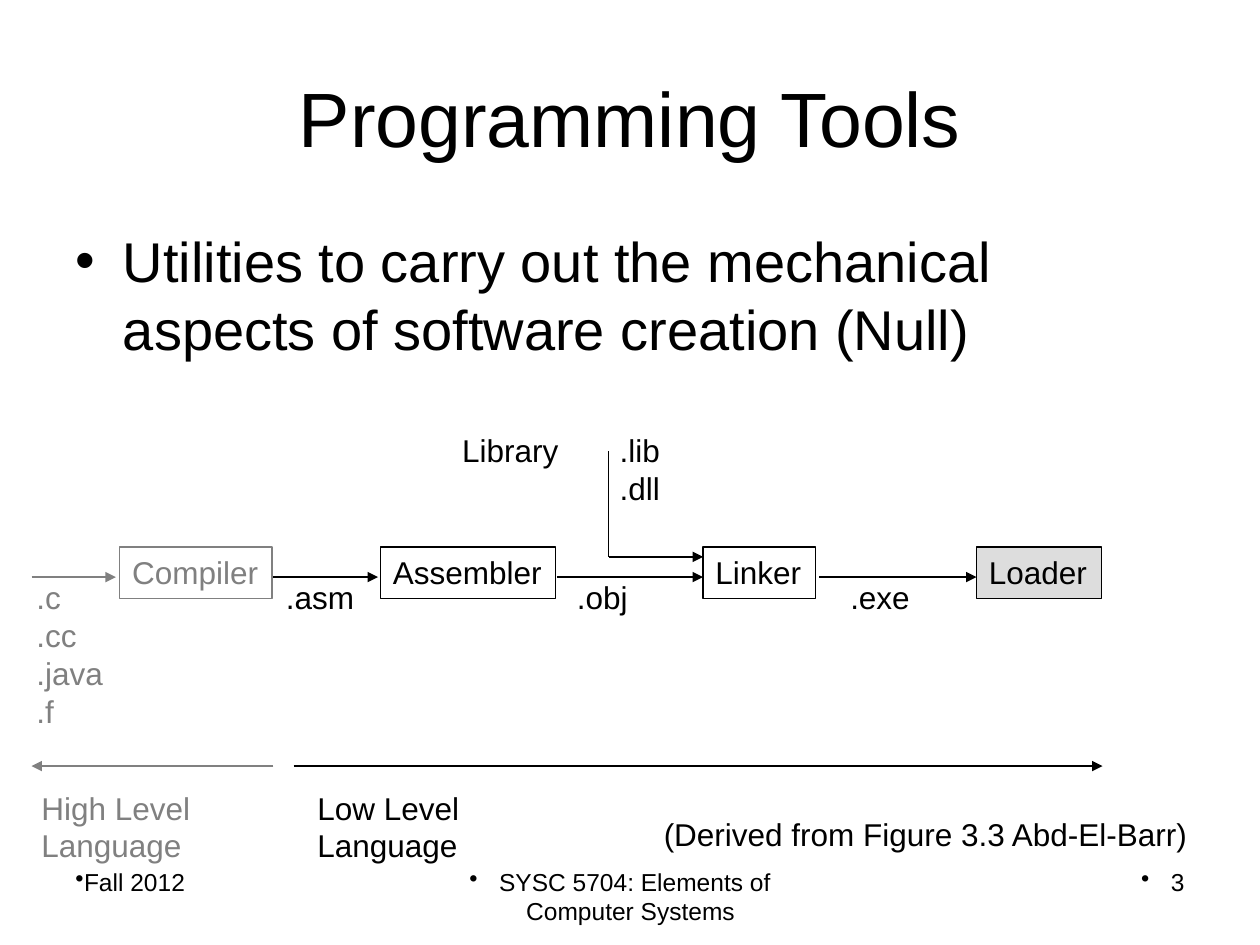
from pptx import Presentation
from pptx.dml.color import RGBColor
from pptx.enum.shapes import MSO_CONNECTOR, MSO_SHAPE
from pptx.enum.text import MSO_ANCHOR, MSO_AUTO_SIZE, PP_ALIGN
from pptx.oxml.ns import qn
from pptx.util import Inches, Pt
from lxml.etree import SubElement

FONT = "Arial"
BLACK = RGBColor(0x00, 0x00, 0x00)
GRAY = RGBColor(0x80, 0x80, 0x80)
LIGHT = RGBColor(0xDD, 0xDD, 0xDD)


def write(sp, text, size, color=BLACK, align=PP_ALIGN.LEFT):
    tf = sp.text_frame
    tf.text = text
    for p in tf.paragraphs:
        p.alignment = align
        p.font.name, p.font.size = FONT, Pt(size)
        p.font.color.rgb = color
    return tf


def place(sp, box):
    sp.left, sp.top, sp.width, sp.height = (Inches(v) for v in box)


def add_label(slide, box, text, color=BLACK):
    sp = slide.shapes.add_textbox(*(Inches(v) for v in box))
    tf = write(sp, text, 18, color)
    tf.word_wrap = False
    tf.auto_size = MSO_AUTO_SIZE.SHAPE_TO_FIT_TEXT


def add_tool(slide, box, text, color=BLACK, fill=None):
    sp = slide.shapes.add_shape(MSO_SHAPE.RECTANGLE, *(Inches(v) for v in box))
    sp.shadow.inherit = False
    if fill is None:
        sp.fill.background()
    else:
        sp.fill.solid()
        sp.fill.fore_color.rgb = fill
    sp.line.color.rgb, sp.line.width = color, Pt(0.75)
    tf = write(sp, text, 18, color)
    tf.word_wrap = False
    tf.vertical_anchor = MSO_ANCHOR.TOP
    tf.auto_size = MSO_AUTO_SIZE.SHAPE_TO_FIT_TEXT


def add_line(slide, x1, y1, x2, y2, color=BLACK, arrow=True):
    line = slide.shapes.add_connector(
        MSO_CONNECTOR.STRAIGHT, *(Inches(v) for v in (x1, y1, x2, y2)))
    line.line.color.rgb, line.line.width = color, Pt(0.75)
    sp_pr = line._element.spPr
    if arrow:
        SubElement(sp_pr.find(qn("a:ln")), qn("a:tailEnd"), type="triangle")
    SubElement(sp_pr, qn("a:effectLst"))


def add_heading(slide, box):
    place(slide.shapes.title, box)
    tf = write(slide.shapes.title, "Programming Tools", 44, align=PP_ALIGN.CENTER)
    tf.vertical_anchor = MSO_ANCHOR.MIDDLE


def add_body(slide, box):
    body = slide.placeholders[1]
    place(body, box)
    write(body, "Utilities to carry out the mechanical aspects of "
                "software creation (Null)", 32)


def add_toolchain(slide, box):
    left, top, width, height = box
    tool_top, flow_y, file_y = top + 0.97, top + 1.21, top + 1.17

    # Tools: name, offset, width, colour, fill
    for name, x, w, color, fill in (
            ("Compiler", 0.7, 1.21, GRAY, None),
            ("Assembler", 2.77, 1.39, BLACK, None),
            ("Linker", 5.33, 0.89, BLACK, None),
            ("Loader", 7.5, 0.99, BLACK, LIGHT)):
        add_tool(slide, (left + x, tool_top, w, 0.41), name, color, fill)

    # Flow between the tools: start and end offsets
    for x1, x2, color in ((0, 0.67, GRAY), (1.92, 2.75, BLACK),
                          (4.17, 5.33, BLACK), (6.25, 7.5, BLACK)):
        add_line(slide, left + x1, flow_y, left + x2, flow_y, color)

    # Files passed along the flow
    for text, x, w, h, color in ((".c\n.cc\n.java\n.f", -0.06, 0.73, 1.3, GRAY),
                                 (".asm", 1.92, 0.74, 0.4, BLACK),
                                 (".obj", 4.23, 0.6, 0.4, BLACK),
                                 (".exe", 6.4, 0.67, 0.4, BLACK)):
        add_label(slide, (left + x, file_y, w, h), text, color)

    # Library branch into the linker
    branch_x, branch_y = left + 4.58, top + 1.05
    add_label(slide, (left + 3.32, top, 0.97, 0.4), "Library")
    add_label(slide, (left + 4.57, top, 0.52, 0.7), ".lib\n.dll")
    add_line(slide, branch_x, top + 0.21, branch_x, branch_y, arrow=False)
    add_line(slide, branch_x, branch_y, left + 5.33, branch_y)

    # Language levels along the bottom
    level_y, bottom = top + 2.71, top + height
    add_line(slide, left + 1.92, level_y, left, level_y, GRAY)
    add_line(slide, left + 2.08, level_y, left + width, level_y)
    add_label(slide, (left - 0.02, bottom - 0.7, 1.38, 0.7),
              "High Level\nLanguage", GRAY)
    add_label(slide, (left + 2.17, bottom - 0.7, 1.33, 0.7),
              "Low Level\nLanguage")


def add_footer(slide, box):
    left, top, width, height = box
    for text, x, w, align in (
            ("Fall 2012", 0, 2.33, PP_ALIGN.LEFT),
            ("SYSC 5704: Elements of Computer Systems", 2.92, 3.17, PP_ALIGN.CENTER),
            ("3", width - 2.33, 2.33, PP_ALIGN.RIGHT)):
        sp = slide.shapes.add_textbox(
            *(Inches(v) for v in (left + x, top, w, height)))
        tf = write(sp, text, 14, align=align)
        tf.word_wrap = True
        p_pr = tf.paragraphs[0]._p.get_or_add_pPr()
        bullet = p_pr.makeelement(qn("a:buChar"), {"char": "•"})
        p_pr.insert(0, bullet)


def main():
    prs = Presentation()
    prs.slide_width, prs.slide_height = Inches(10), Inches(7.5)
    slide = prs.slides.add_slide(prs.slide_layouts[1])
    add_heading(slide, (0.5, 0.3, 9, 1.25))
    add_body(slide, (0.5, 1.75, 9, 4.95))
    add_toolchain(slide, (0.25, 3.37, 8.5, 3.54))
    add_label(slide, (5.17, 6.42, 4.37, 0.4),
              "(Derived from Figure 3.3 Abd-El-Barr)")
    add_footer(slide, (0.5, 6.83, 9, 0.52))
    prs.save("out.pptx")


if __name__ == "__main__":
    main()
